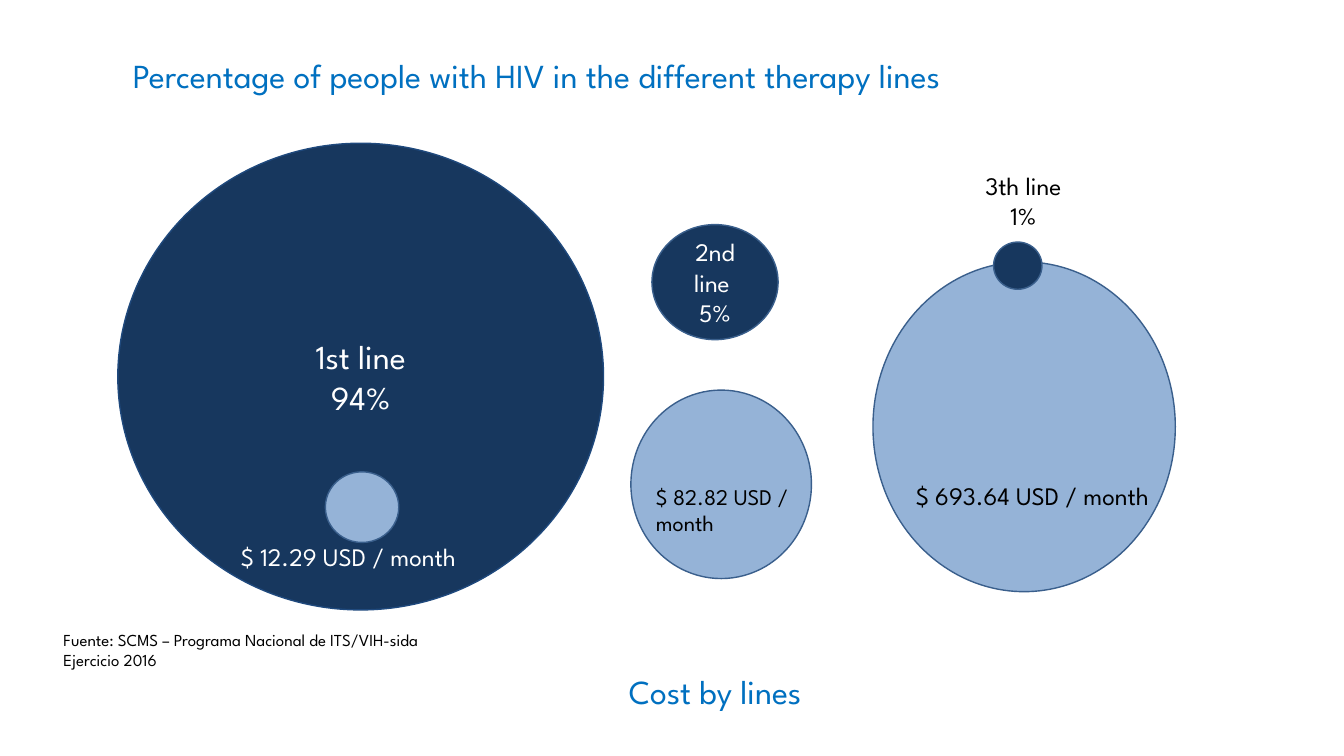
import pptx
import pptx.dml.color
import pptx.enum.shapes
import pptx.enum.text
import pptx.util

Cm = pptx.util.Cm
Pt = pptx.util.Pt
Align = pptx.enum.text.PP_ALIGN

COLORS = {
    "people": "17375E",
    "cost": "95B3D7",
    "first_edge": "1F497D",
    "edge": "3A5F8C",
    "heading": "0070C0",
    "white": "FFFFFF",
    "black": "000000",
}


def color(name):
    return pptx.dml.color.RGBColor.from_string(COLORS[name])


def write(frame, lines, size, ink, align):
    frame.word_wrap = True
    frame.text = "\n".join(lines)
    for paragraph in frame.paragraphs:
        paragraph.alignment = align
        for run in paragraph.runs:
            run.font.name = "League Spartan"
            run.font.size = Pt(size)
            run.font.color.rgb = color(ink)


deck = pptx.Presentation()
deck.slide_width = Cm(33.87)
deck.slide_height = Cm(19.05)
slide = deck.slides.add_slide(deck.slide_layouts[6])

circles = [
    (2.97, 3.61, 12.24, 11.76, "people", "first_edge", ["1st line", "94%"], 24),
    (16.43, 5.66, 3.18, 2.9, "people", "edge", ["2nd line ", "5%"], 18),
    (8.2, 11.89, 1.85, 1.78, "cost", "edge", [], 18),
    (15.9, 9.83, 4.55, 4.75, "cost", "edge", [], 18),
    (22, 6.6, 7.62, 8.31, "cost", "edge", [], 18),
    (25.04, 6.1, 1.22, 1.19, "people", "edge", [], 18),
]
for left, top, width, height, fill, edge, lines, size in circles:
    circle = slide.shapes.add_shape(
        pptx.enum.shapes.MSO_SHAPE.OVAL, Cm(left), Cm(top), Cm(width), Cm(height)
    )
    circle.shadow.inherit = False
    circle.fill.solid()
    circle.fill.fore_color.rgb = color(fill)
    circle.line.color.rgb = color(edge)
    circle.line.width = Pt(1)
    if lines:
        circle.text_frame.vertical_anchor = pptx.enum.text.MSO_ANCHOR.MIDDLE
        write(circle.text_frame, lines, size, "white", Align.CENTER)

labels = [
    (3.1, 1.27, 25.02, 1.27, 24, "heading", Align.LEFT,
     ["Percentage of people with HIV in the different therapy lines"]),
    (24.43, 4.17, 2.72, 1.8, 18, "black", Align.CENTER, ["3th line", "1%"]),
    (15.6, 16.79, 5.66, 1.27, 24, "heading", Align.LEFT, ["Cost by lines"]),
    (5.82, 13.51, 6.71, 1.02, 18, "white", Align.LEFT, ["$ 12.29 USD / month"]),
    (16.28, 12.04, 4.09, 1.63, 16, "black", Align.LEFT, ["$ 82.82 USD /", "month"]),
    (22.83, 11.99, 7.06, 1.02, 18, "black", Align.LEFT, ["$ 693.64 USD / month"]),
    (1.35, 15.75, 11.05, 1.27, 12, "black", Align.LEFT,
     ["Fuente: SCMS – Programa Nacional de ITS/VIH-sida", "Ejercicio 2016"]),
]
for left, top, width, height, size, ink, align, lines in labels:
    label = slide.shapes.add_textbox(Cm(left), Cm(top), Cm(width), Cm(height))
    write(label.text_frame, lines, size, ink, align)

deck.save("out.pptx")
